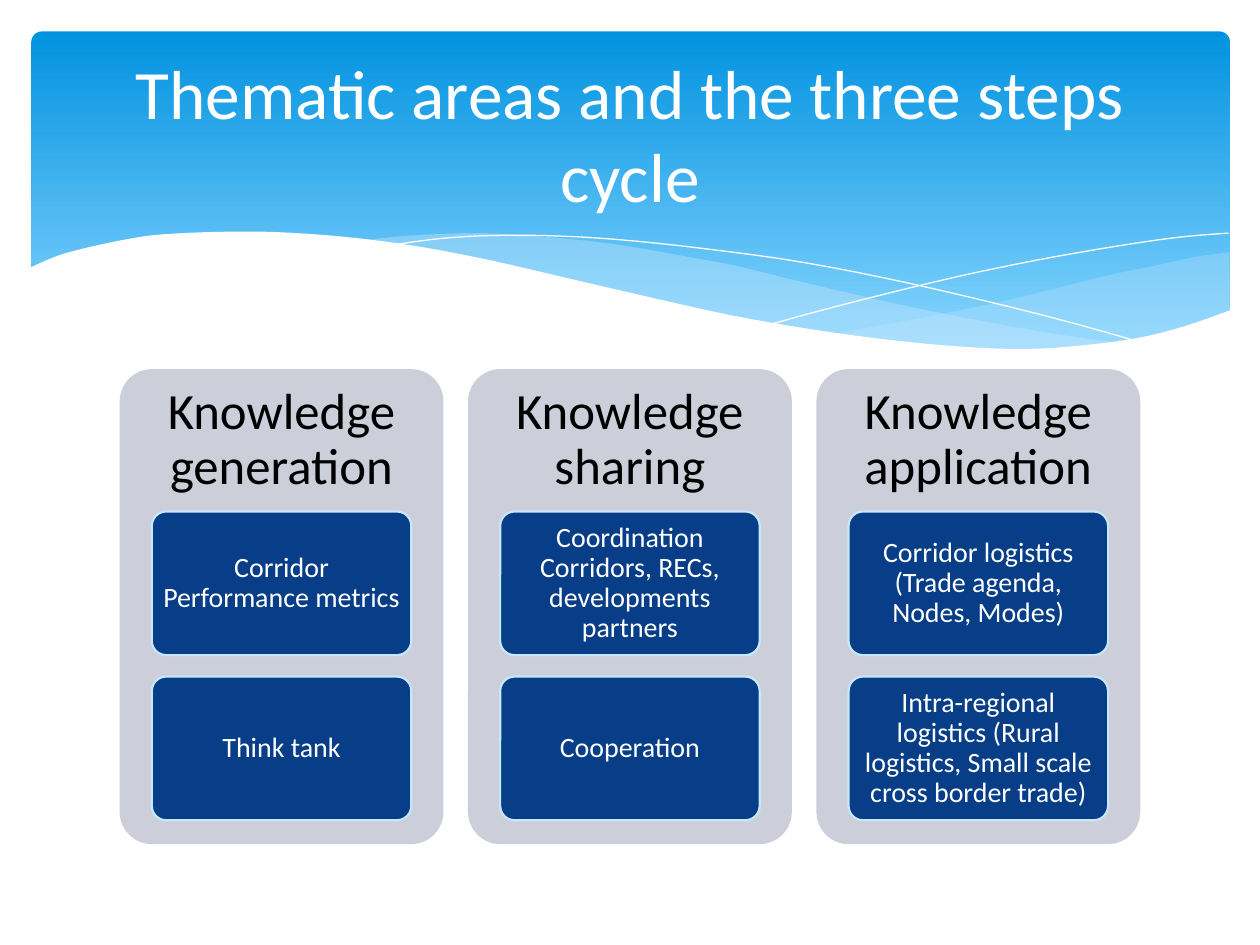
from dataclasses import dataclass

from lxml import etree
from pptx import Presentation
from pptx import util as u
from pptx.dml.color import RGBColor
from pptx.enum import shapes, text
from pptx.oxml.ns import qn

PX = 9144  # EMU per px, 100 px to the inch


@dataclass(frozen=True)
class Theme:
    font: str = "Calibri"
    banner_top: str = "0293E0"
    banner_bottom: str = "83D3FE"
    pale: str = "C6E7FC"
    white: str = "FFFFFF"
    black: str = "000000"
    card: str = "CCCED9"
    tile: str = "073E87"
    title_size: float = 39.6
    heading_size: int = 29
    tile_size: int = 16


THEME = Theme()

STEPS = [
    ("Knowledge generation", ["Corridor Performance metrics", "Think tank"]),
    ("Knowledge sharing",
     ["Coordination Corridors, RECs, developments partners", "Cooperation"]),
    ("Knowledge application",
     ["Corridor logistics (Trade agenda, Nodes, Modes)",
      "Intra-regional logistics (Rural logistics, Small scale cross border trade)"]),
]

# Knots of the wave curves, in px from the corner of the wave box.
RIGHT_BAND_TOP = [(953, 16), (925, 20), (898, 26), (868, 32), (838, 39), (782, 53),
                  (730, 64), (683, 73), (638, 81)]
RIGHT_BAND_BOTTOM = [(638, 81), (668, 85), (709, 90), (746, 93), (780, 94), (821, 93),
                     (858, 89), (890, 83), (919, 75), (953, 63)]
MIDDLE_BAND_TOP = [(870, 89), (814, 81), (752, 70), (683, 56), (606, 38), (561, 27),
                   (518, 19), (479, 12), (442, 7), (397, 3), (357, 1), (321, 2),
                   (290, 4), (263, 7)]
MIDDLE_BAND_BOTTOM = [(263, 7), (319, 15), (381, 27), (426, 38), (507, 56), (578, 71),
                      (642, 82), (699, 90), (750, 93), (795, 94), (834, 93), (870, 89)]
FALLING_LINE = [(286, 11), (305, 8), (330, 5), (364, 3), (410, 3), (466, 6), (533, 13),
                (613, 24), (704, 42), (808, 67), (884, 88)]
RISING_LINE = [(590, 73), (630, 62), (697, 45), (753, 32), (813, 20), (872, 10),
               (915, 4), (952, 1)]
WHITE_WAVE = [(954, 62), (917, 75), (876, 85), (827, 91), (786, 93), (738, 91),
              (685, 86), (625, 78), (556, 66), (480, 49), (424, 36), (368, 23),
              (317, 13), (269, 6), (227, 2), (188, 0), (154, 0), (123, 1), (96, 3),
              (72, 7), (53, 11), (29, 17), (13, 23), (0, 29)]


def emu(*lengths):
    return [u.Emu(round(length * PX)) for length in lengths]


def rgb(color):
    return RGBColor.from_string(color)


def smooth(knots, steps=4):
    """Return points of a Catmull-Rom curve through the knots."""
    ends = [knots[0], *knots, knots[-1]]
    points = [knots[0]]
    for a, b, c, d in zip(ends, ends[1:], ends[2:], ends[3:]):
        for t in (step / steps for step in range(1, steps + 1)):
            points.append(tuple(
                (2 * q + (r - p) * t + (2 * p - 5 * q + 4 * r - s) * t ** 2
                 + (3 * q - p - 3 * r + s) * t ** 3) / 2
                for p, q, r, s in zip(a, b, c, d)))
    return points


def add_wave(slide, box, points, fill=None, opacity=100):
    """Draw a filled area, or a white hairline when there is no fill."""
    left, top = box[:2]
    corners = [tuple(emu(left + x, top + y)) for x, y in points]
    builder = slide.shapes.build_freeform(*corners[0], scale=1.0)
    builder.add_line_segments(corners[1:], close=fill is not None)
    wave = builder.convert_to_shape()
    wave.shadow.inherit = False
    if fill is None:
        wave.fill.background()
        wave.line.color.rgb = rgb(THEME.white)
        wave.line.width = u.Pt(0)
        return
    wave.fill.solid()
    wave.fill.fore_color.rgb = rgb(fill)
    wave.line.fill.background()
    if opacity < 100:
        color = wave.fill._xPr.find(".//" + qn("a:srgbClr"))
        etree.SubElement(color, qn("a:alpha")).set("val", str(opacity * 1000))


def add_rounded(slide, box, corner):
    panel = slide.shapes.add_shape(shapes.MSO_SHAPE.ROUNDED_RECTANGLE, *emu(*box))
    panel.adjustments[0] = corner
    panel.shadow.inherit = False
    panel.line.fill.background()
    return panel


def write(shape, words, size, color, margins=None, spacing=None):
    frame = shape.text_frame
    frame.text = words
    frame.word_wrap = True
    frame.vertical_anchor = text.MSO_ANCHOR.MIDDLE
    if margins:
        across, down = emu(*margins)
        frame.margin_left = frame.margin_right = across
        frame.margin_top = frame.margin_bottom = down
    paragraph = frame.paragraphs[0]
    paragraph.alignment = text.PP_ALIGN.CENTER
    paragraph.line_spacing = spacing
    paragraph.font.name = THEME.font
    paragraph.font.size = u.Pt(size)
    paragraph.font.color.rgb = rgb(color)


def add_banner(slide, box):
    banner = add_rounded(slide, box, 0.03)
    banner.fill.gradient()
    banner.fill.gradient_angle = 270
    start, end = banner.fill.gradient_stops
    start.color.rgb, start.position = rgb(THEME.banner_top), 0
    end.color.rgb, end.position = rgb(THEME.banner_bottom), 0.9


def add_waves(slide, box):
    width, height = box[2:]
    add_wave(slide, box, smooth(RIGHT_BAND_TOP) + smooth(RIGHT_BAND_BOTTOM), THEME.pale, 29)
    add_wave(slide, box, smooth(MIDDLE_BAND_TOP) + smooth(MIDDLE_BAND_BOTTOM), THEME.pale, 40)
    for line in (FALLING_LINE, RISING_LINE):
        add_wave(slide, box, smooth(line))
    add_wave(slide, box, smooth(WHITE_WAVE) + [(0, height), (width, height)], THEME.white)


def add_title(slide, box, words):
    title = slide.shapes.title
    title.left, title.top, title.width, title.height = emu(*box)
    write(title, words, THEME.title_size, THEME.white)
    slide.shapes._spTree.append(title._element)  # in front of the banner


def add_step(slide, box, heading, topics):
    left, top, width, height = box
    card = add_rounded(slide, box, 0.1)
    card.fill.solid()
    card.fill.fore_color.rgb = rgb(THEME.card)

    heading_height, tile_width, tile_height, gap = 113, 206, 114, 17
    header = slide.shapes.add_textbox(*emu(left, top, width, heading_height))
    write(header, heading, THEME.heading_size, THEME.black, (12, 12), 0.9)
    for row, topic in enumerate(topics):
        tile_top = top + heading_height + row * (tile_height + gap)
        tile = add_rounded(
            slide, (left + (width - tile_width) / 2, tile_top, tile_width, tile_height), 0.1)
        tile.fill.solid()
        tile.fill.fore_color.rgb = rgb(THEME.tile)
        tile.line.color.rgb = rgb(THEME.pale)
        tile.line.width = u.Pt(1.25)
        write(tile, topic, THEME.tile_size, THEME.white, (4, 3), 0.9)


def add_steps(slide, box, steps):
    left, top, width, height = box
    card_width = 257
    pitch = (width - card_width) / (len(steps) - 1)
    for column, (heading, topics) in enumerate(steps):
        add_step(slide, (left + column * pitch, top, card_width, height), heading, topics)


def main():
    deck = Presentation()
    deck.slide_width, deck.slide_height = emu(1000, 750)
    slide = deck.slides.add_slide(deck.slide_layouts[5])
    add_banner(slide, (25, 25, 951, 270))
    add_waves(slide, (23, 184, 954, 145))
    add_steps(slide, (95, 293, 810, 377), STEPS)
    add_title(slide, (50, 37, 900, 137), "Thematic areas and the three steps cycle")
    deck.save("out.pptx")


if __name__ == "__main__":
    main()
